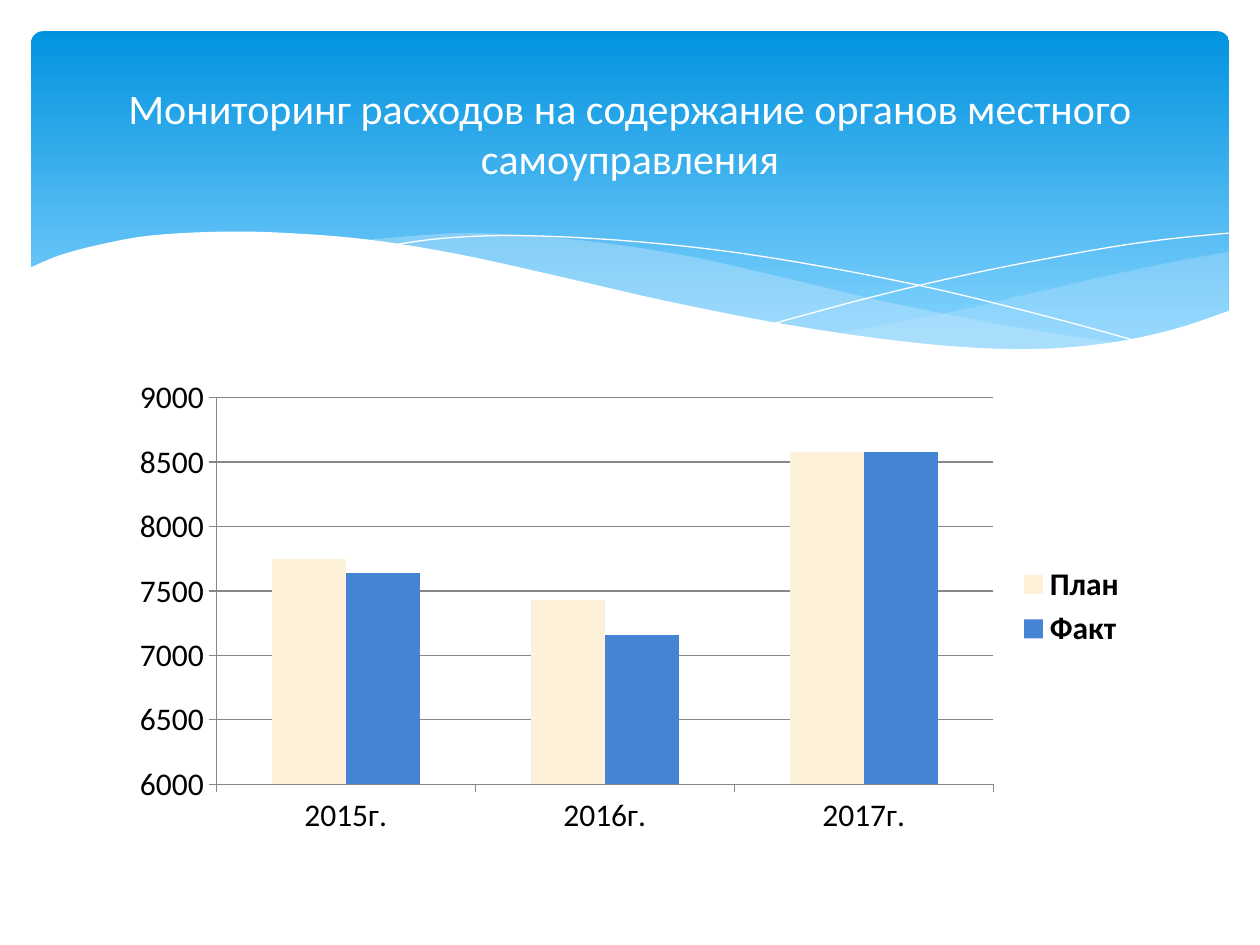
from dataclasses import dataclass
from typing import Optional

from lxml import etree
from pptx import Presentation
from pptx.chart.data import CategoryChartData
from pptx.dml.color import RGBColor
from pptx.enum.chart import XL_CHART_TYPE, XL_LEGEND_POSITION, XL_TICK_MARK
from pptx.enum.shapes import MSO_SHAPE
from pptx.enum.text import MSO_ANCHOR, PP_ALIGN
from pptx.oxml.ns import qn
from pptx.util import Cm, Pt

COLUMN = XL_CHART_TYPE.COLUMN_CLUSTERED
LEGEND_RIGHT = XL_LEGEND_POSITION.RIGHT
TICK_OUT, TICK_NONE = XL_TICK_MARK.OUTSIDE, XL_TICK_MARK.NONE
ROUNDED = MSO_SHAPE.ROUNDED_RECTANGLE
MIDDLE, CENTER = MSO_ANCHOR.MIDDLE, PP_ALIGN.CENTER

WHITE = RGBColor(0xFF, 0xFF, 0xFF)
BLACK = RGBColor(0x00, 0x00, 0x00)
GRAY = RGBColor(0x87, 0x87, 0x87)
DEEP_BLUE = RGBColor(0x02, 0x93, 0xE0)
SKY_BLUE = RGBColor(0x83, 0xD3, 0xFE)
PALE_BLUE = RGBColor(0xC6, 0xE7, 0xFC)
CREAM = RGBColor(0xFD, 0xF2, 0xD9)
BLUE = RGBColor(0x45, 0x84, 0xD3)
FONT = "Calibri"

Point = tuple[float, float]


@dataclass
class Wave:
    """Smooth edges through knots in cm; without a fill it is a white line."""
    edges: list[list[Point]]
    fill: Optional[RGBColor] = None
    opacity: int = 100


@dataclass
class Series:
    name: str
    values: list[int]
    color: RGBColor


WAVES = [
    Wave([[(24.77, 5.08), (23.75, 5.26), (21.87, 5.66), (19.13, 6.3), (16.79, 6.73)],
          [(16.79, 6.73), (17.91, 6.88), (19.23, 7.01), (20.68, 7.06), (22.15, 6.96),
           (23.39, 6.73), (24.77, 6.27)]], PALE_BLUE, 29),
    Wave([[(22.68, 6.93), (20.5, 6.6), (17.93, 6.1), (15.98, 5.64), (14.1, 5.21),
           (12.42, 4.93), (10.67, 4.75), (9.17, 4.7), (7.26, 4.85)],
          [(7.26, 4.85), (9.19, 5.16), (11.4, 5.64), (14.38, 6.3), (16.89, 6.76),
           (19, 7.01), (20.78, 7.06), (22.68, 6.93)]], PALE_BLUE, 40),
    Wave([[(7.85, 4.95), (8.97, 4.8), (10.57, 4.75), (12.95, 4.88), (15.44, 5.18),
           (18.47, 5.74), (21.11, 6.38), (23.04, 6.91)]]),
    Wave([[(15.57, 6.53), (17.65, 5.97), (19.71, 5.49), (22, 5.05), (23.47, 4.83),
           (24.77, 4.7)]]),
    Wave([[(24.82, 6.25), (23.62, 6.65), (22.23, 6.93), (20.55, 7.04), (18.44, 6.91),
           (15.9, 6.55), (13.44, 6.07), (11.35, 5.59), (9.27, 5.13), (7.42, 4.83),
           (5.84, 4.7), (4.5, 4.67), (3.02, 4.75), (1.93, 4.95), (1.17, 5.16),
           (0.58, 5.41)],
          [(0.58, 8.36), (24.82, 8.36)]], WHITE),
]

CATEGORIES = ["2015г.", "2016г.", "2017г."]
SERIES = [
    Series("План", [7750, 7430, 8580], CREAM),
    Series("Факт", [7640, 7160, 8580], BLUE),
]


def smooth(knots: list[Point], steps: int = 5) -> list[Point]:
    """Return points of a Catmull-Rom spline through the knots."""
    padded = [knots[0], *knots, knots[-1]]
    points = [knots[0]]
    for a, b, c, d in zip(padded, padded[1:], padded[2:], padded[3:]):
        for step in range(1, steps + 1):
            t = step / steps
            points.append(tuple(
                (2 * q + (r - p) * t + (2 * p - 5 * q + 4 * r - s) * t ** 2
                 + (3 * q - p - 3 * r + s) * t ** 3) / 2
                for p, q, r, s in zip(a, b, c, d)))
    return points


def add_wave(slide, wave: Wave) -> None:
    points = [(Cm(x), Cm(y)) for edge in wave.edges for x, y in smooth(edge)]
    builder = slide.shapes.build_freeform(*points[0])
    builder.add_line_segments(points[1:], close=wave.fill is not None)
    sp = builder.convert_to_shape()
    sp.shadow.inherit = False
    if wave.fill is None:
        sp.fill.background()
        sp.line.color.rgb = WHITE
        sp.line.width = Pt(0)
        return
    sp.fill.solid()
    sp.fill.fore_color.rgb = wave.fill
    sp.line.fill.background()
    if wave.opacity < 100:
        color = sp.fill._xPr.find(qn("a:solidFill"))[0]
        etree.SubElement(color, qn("a:alpha"), val=str(wave.opacity * 1000))


def add_banner(slide) -> None:
    sp = slide.shapes.add_shape(ROUNDED, Cm(0.63), Cm(0.63), Cm(24.15), Cm(6.86))
    sp.adjustments[0] = 0.034
    sp.shadow.inherit = False
    sp.line.fill.background()
    sp.fill.gradient()
    sp.fill.gradient_angle = 270
    for stop, position, color in zip(sp.fill.gradient_stops, (0, 0.9),
                                     (DEEP_BLUE, SKY_BLUE)):
        stop.position = position
        stop.color.rgb = color


def add_title(slide, text: str) -> None:
    tf = slide.shapes.add_textbox(Cm(1.27), Cm(0.94), Cm(22.86), Cm(3.48)).text_frame
    tf.word_wrap = True
    tf.vertical_anchor = MIDDLE
    tf.text = text
    p = tf.paragraphs[0]
    p.alignment = CENTER
    font = p.runs[0].font
    font.name, font.size, font.color.rgb = FONT, Pt(24), WHITE


def add_expense_chart(slide) -> None:
    data = CategoryChartData()
    data.categories = CATEGORIES
    for series in SERIES:
        data.add_series(series.name, series.values)
    chart = slide.shapes.add_chart(COLUMN, Cm(2.41), Cm(7.44), Cm(20.57), Cm(9.58),
                                   data).chart
    chart.has_title = False
    chart.has_legend = True
    chart.legend.position = LEGEND_RIGHT
    chart.legend.include_in_layout = False
    for font in (chart.font, chart.legend.font):
        font.name, font.size, font.color.rgb = FONT, Pt(18), BLACK
    chart.legend.font.bold = True

    value_axis = chart.value_axis
    value_axis.minimum_scale, value_axis.maximum_scale = 6000, 9000
    value_axis.major_unit = 500
    value_axis.has_major_gridlines = True
    value_axis.major_gridlines.format.line.color.rgb = GRAY
    for axis in (value_axis, chart.category_axis):
        axis.major_tick_mark, axis.minor_tick_mark = TICK_OUT, TICK_NONE
        axis.format.line.color.rgb = GRAY

    plot = chart.plots[0]
    plot.gap_width, plot.overlap = 150, 0
    plot.vary_by_categories = False
    for bars, series in zip(plot.series, SERIES):
        bars.format.fill.solid()
        bars.format.fill.fore_color.rgb = series.color


def main() -> None:
    prs = Presentation()
    prs.slide_width, prs.slide_height = Cm(25.4), Cm(19.05)
    slide = prs.slides.add_slide(prs.slide_layouts[6])
    add_banner(slide)
    for wave in WAVES:
        add_wave(slide, wave)
    add_expense_chart(slide)
    add_title(slide, "Мониторинг расходов на содержание органов местного самоуправления")
    prs.save("out.pptx")


if __name__ == "__main__":
    main()
